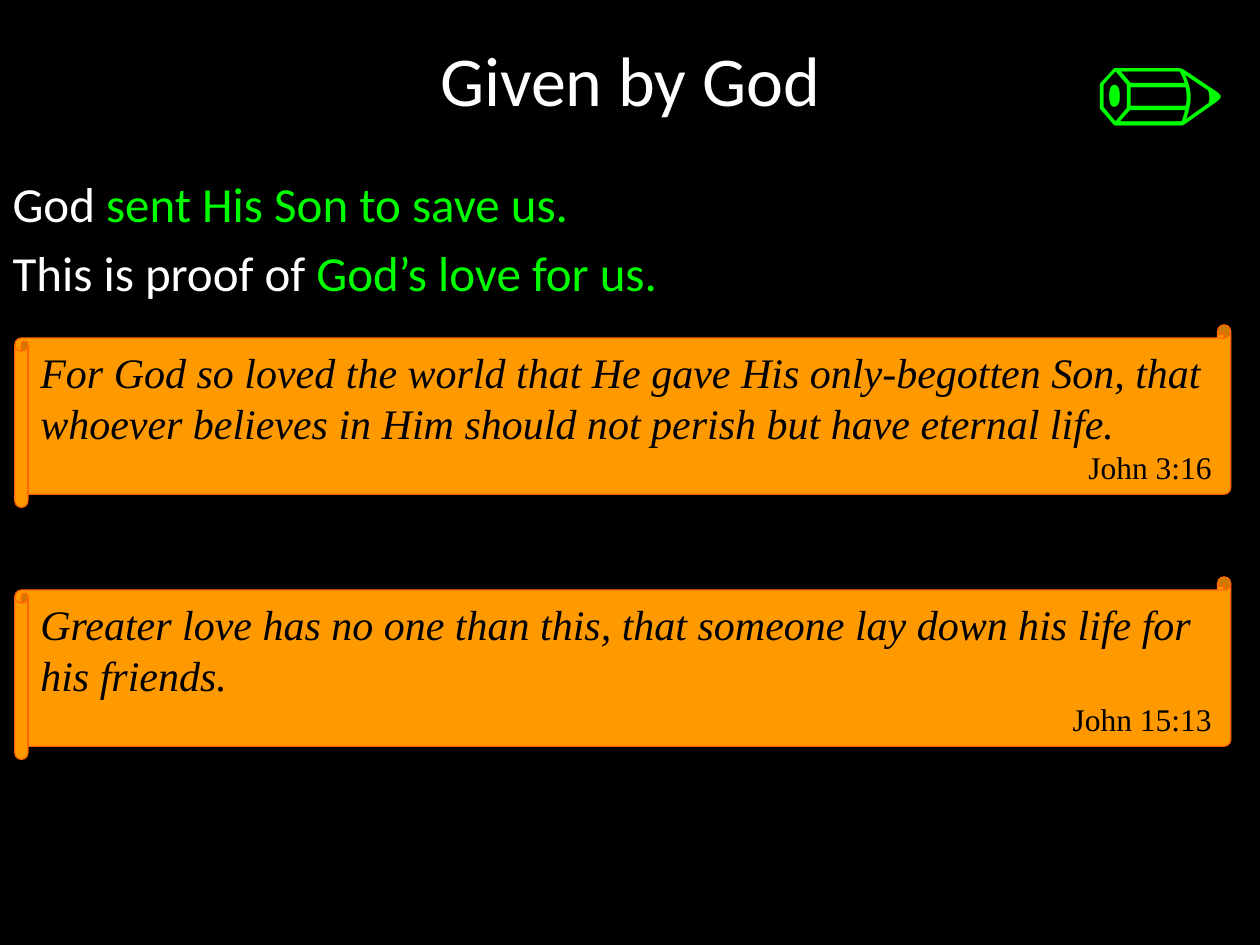
import dataclasses

import lxml.etree
import pptx
import pptx.dml.color
import pptx.enum.shapes
import pptx.enum.text
import pptx.oxml.ns
import pptx.util

Cm = pptx.util.Cm
Pt = pptx.util.Pt
Align = pptx.enum.text.PP_ALIGN
AutoSize = pptx.enum.text.MSO_AUTO_SIZE
Anchor = pptx.enum.text.MSO_ANCHOR


@dataclasses.dataclass(frozen=True)
class Theme:
    background: str = "000000"
    text: str = "FFFFFF"
    accent: str = "00FF00"
    scroll: str = "FF9900"
    scroll_edge: str = "FF6600"
    verse: str = "000000"
    sans: str = "Calibri"
    serif: str = "Times New Roman"
    title_size: int = 40
    body_size: int = 28
    verse_size: int = 24
    reference_size: int = 18
    pencil_size: int = 80


theme = Theme()


def rgb(value):
    return pptx.dml.color.RGBColor.from_string(value)


def style(span, name, size, color, italic=False):
    span.font.name = name
    span.font.size = Pt(size)
    span.font.color.rgb = rgb(color)
    span.font.italic = italic


deck = pptx.Presentation()
deck.slide_width, deck.slide_height = Cm(25.4), Cm(19.05)
page = deck.slides.add_slide(deck.slide_layouts[1])
page.background.fill.solid()
page.background.fill.fore_color.rgb = rgb(theme.background)

# Title
title = page.shapes.title
title.left, title.top, title.width, title.height = Cm(0), Cm(0), Cm(25.4), Cm(3.18)
title.text_frame.text = "Given by God"
title.text_frame.auto_size = AutoSize.NONE
title.text_frame.vertical_anchor = Anchor.MIDDLE
heading = title.text_frame.paragraphs[0]
heading.alignment = Align.CENTER
style(heading.runs[0], theme.sans, theme.title_size, theme.text)

# Statements with the answer highlighted
statements = [
    ("God", " sent His Son to save us."),
    ("This is proof of ", "God’s love for us."),
]
body = page.placeholders[1]
body.left, body.top, body.width, body.height = Cm(0), Cm(3.38), Cm(25.4), Cm(15.67)
body.text_frame.text = "\n".join(opening for opening, answer in statements)
body.text_frame.auto_size = AutoSize.NONE
for para, (opening, answer) in zip(body.text_frame.paragraphs, statements):
    para.space_before = Pt(theme.body_size * 0.2)
    properties = para._p.get_or_add_pPr()
    properties.set("marL", str(Cm(0.95)))
    properties.set("indent", str(-Cm(0.95)))
    lxml.etree.SubElement(properties, pptx.oxml.ns.qn("a:buNone"))
    para.add_run().text = answer
    for span, color in zip(para.runs, (theme.text, theme.accent)):
        style(span, theme.sans, theme.body_size, color)

# Bible verses on scrolls
verses = [
    ("For God so loved the world that He gave His only-begotten Son, "
     "that whoever believes in Him should not perish but have eternal life.",
     "John 3:16"),
    ("Greater love has no one than this, that someone lay down his life "
     "for his friends.",
     "John 15:13"),
]
for index, (verse, reference) in enumerate(verses):
    scroll = page.shapes.add_shape(
        pptx.enum.shapes.MSO_SHAPE.HORIZONTAL_SCROLL,
        Cm(0.3), Cm(6.55 + 5.08 * index), Cm(24.51), Cm(3.68))
    scroll.adjustments[0] = 0.072
    scroll.shadow.inherit = False
    scroll.fill.solid()
    scroll.fill.fore_color.rgb = rgb(theme.scroll)
    scroll.line.color.rgb = rgb(theme.scroll_edge)
    scroll.line.width = Pt(0.75)
    frame = scroll.text_frame
    frame.text = f"{verse}\n{reference}"
    frame.word_wrap = True
    frame.auto_size = AutoSize.SHAPE_TO_FIT_TEXT
    frame.vertical_anchor = Anchor.MIDDLE
    quote, source = frame.paragraphs
    quote.alignment, source.alignment = Align.LEFT, Align.RIGHT
    style(quote.runs[0], theme.serif, theme.verse_size, theme.verse, italic=True)
    style(source.runs[0], theme.serif, theme.reference_size, theme.verse)

# Pencil symbol
pencil = page.shapes.add_textbox(Cm(21.39), Cm(0), Cm(4.01), Cm(3.63))
pencil.text_frame.text = "✏"
pencil.text_frame.word_wrap = True
pencil.text_frame.auto_size = AutoSize.SHAPE_TO_FIT_TEXT
pencil.text_frame.vertical_anchor = Anchor.MIDDLE
symbol = pencil.text_frame.paragraphs[0]
symbol.alignment = Align.CENTER
style(symbol.runs[0], theme.serif, theme.pencil_size, theme.accent)

deck.save("out.pptx")
